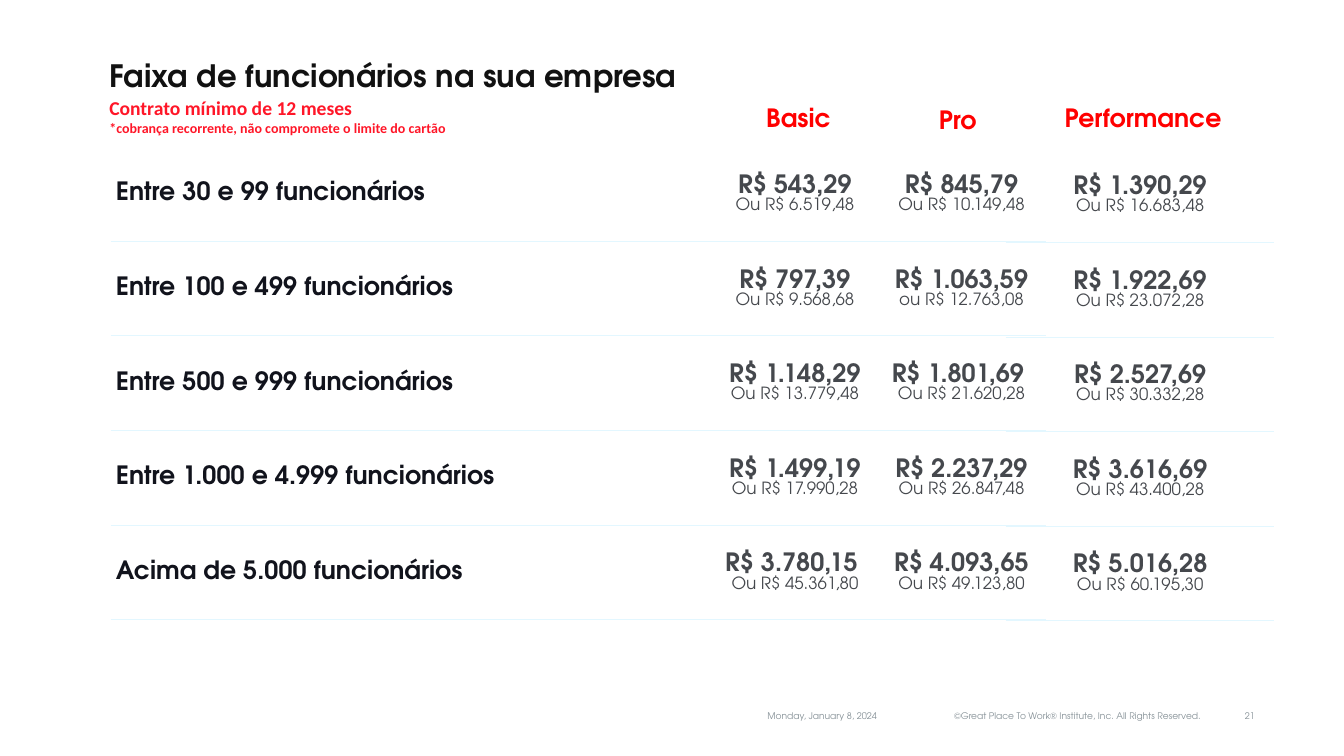
from dataclasses import dataclass

from lxml import etree
from pptx import Presentation
from pptx.dml.color import RGBColor
from pptx.enum.text import MSO_ANCHOR as Anchor, PP_ALIGN as Align
from pptx.oxml.ns import qn
from pptx.slide import Slide
from pptx.table import _Cell as Cell
from pptx.text.text import _Paragraph as Paragraph, _Run as Run
from pptx.util import Emu, Inches, Pt

UNIT = Inches(0.1)  # one column or row of the slide grid
GRID_COLUMNS, GRID_ROWS = 266.7, 150
PLAIN_TABLE = "{2D5ABB26-0587-4C30-8999-92F81FD0307C}"


@dataclass(frozen=True)
class Style:
    size: int
    color: str
    bold: bool = True
    font: str = "TeX Gyre Adventor"


@dataclass(frozen=True)
class Theme:
    title: Style = Style(44, "111111")
    contract: Style = Style(28, "FF1628", font="Calibri")
    note: Style = Style(20, "FF1628", font="Calibri")
    plan: Style = Style(36, "FF0000")
    label: Style = Style(36, "11131C")
    price: Style = Style(36, "45484D")
    yearly: Style = Style(24, "45484D", bold=False)
    footer: Style = Style(13, "879298", bold=False)
    rule: str = "E3F7FF"
    rule_width: float = 1.5


@dataclass(frozen=True)
class Area:
    """Place on the grid, in columns and rows."""
    left: float
    top: float
    width: float
    height: float

    def lengths(self) -> list[Emu]:
        return [grid(n) for n in (self.left, self.top, self.width, self.height)]


@dataclass(frozen=True)
class Price:
    monthly: str
    yearly: str


@dataclass(frozen=True)
class Band:
    """Prices of the three plans for one range of staff."""
    label: str
    basic: Price
    pro: Price
    performance: Price


@dataclass(frozen=True)
class Caption:
    text: str
    area: Area


THEME = Theme()
ROW_HEIGHT = 18.78
BANDS = [
    Band("Entre 30 e 99 funcionários", Price("R$ 543,29", "Ou R$ 6.519,48"),
         Price("R$ 845,79", "Ou R$ 10.149,48"), Price("R$ 1.390,29", "Ou R$ 16.683,48")),
    Band("Entre 100 e 499 funcionários", Price("R$ 797,39", "Ou R$ 9.568,68"),
         Price("R$ 1.063,59", "ou R$ 12.763,08"), Price("R$ 1.922,69", "Ou R$ 23.072,28")),
    Band("Entre 500 e 999 funcionários", Price("R$ 1.148,29", "Ou R$ 13.779,48"),
         Price("R$ 1.801,69 ", "Ou R$ 21.620,28"), Price("R$ 2.527,69", "Ou R$ 30.332,28")),
    Band("Entre 1.000 e 4.999 funcionários", Price("R$ 1.499,19", "Ou R$ 17.990,28"),
         Price("R$ 2.237,29", "Ou R$ 26.847,48"), Price("R$ 3.616,69", "Ou R$ 43.400,28")),
    Band("Acima de 5.000 funcionários", Price("R$ 3.780,15 ", "Ou R$ 45.361,80"),
         Price("R$ 4.093,65", "Ou R$ 49.123,80"), Price("R$ 5.016,28", "Ou R$ 60.195,30")),
]
PLANS = [
    Caption("Basic", Area(145.5, 19.9, 25.9, 7.1)),
    Caption("Pro", Area(177.1, 20.2, 25.9, 7.1)),
    Caption("Performance", Area(208.5, 19.9, 36.7, 7.1)),
]
FOOTERS = [
    Caption("Monday, January 8, 2024", Area(116.7, 140.8, 58.3, 2.5)),
    Caption("©Great Place To Work® Institute, Inc. All Rights Reserved.",
            Area(178.2, 140.8, 61, 2.5)),
    Caption("21", Area(242, 140.8, 8, 2.5)),
]


def grid(count: float) -> Emu:
    return Emu(round(count * UNIT))


def format_run(span: Run, style: Style) -> None:
    span.font.name = style.font
    span.font.size = Pt(style.size)
    span.font.bold = style.bold
    span.font.color.rgb = RGBColor.from_string(style.color)


def format_paragraph(para: Paragraph, align: Align, *styles: Style) -> None:
    """Align the paragraph and give each run its style in turn."""
    para.alignment = align
    for span, style in zip(para.runs, styles):
        format_run(span, style)


def add_text(page: Slide, caption: Caption, align: Align, *styles: Style,
             anchor: Anchor = Anchor.TOP) -> None:
    box = page.shapes.add_textbox(*caption.area.lengths())
    frame = box.text_frame
    frame.word_wrap = True
    frame.vertical_anchor = anchor
    frame.text = caption.text
    format_paragraph(frame.paragraphs[0], align, *styles)


def underline(cell: Cell) -> None:
    """Rule the bottom of the cell; borders must precede the fill."""
    line = etree.Element(qn("a:lnB"), w=str(Pt(THEME.rule_width)))
    fill = etree.SubElement(line, qn("a:solidFill"))
    etree.SubElement(fill, qn("a:srgbClr"), val=THEME.rule)
    cell._tc.get_or_add_tcPr().insert(0, line)


def fill_cell(cell: Cell, content: str | Price) -> None:
    cell.fill.background()
    cell.vertical_anchor = Anchor.MIDDLE
    frame = cell.text_frame
    if isinstance(content, Price):
        cell.margin_left = cell.margin_right = cell.margin_top = Inches(0.01)
        cell.margin_bottom = 0
        frame.text = f"{content.monthly}\n{content.yearly}"
        for para, style in zip(frame.paragraphs, (THEME.price, THEME.yearly)):
            format_paragraph(para, Align.CENTER, style)
    else:
        frame.text = content
        format_paragraph(frame.paragraphs[0], Align.LEFT, THEME.label)
    underline(cell)


def add_price_table(page: Slide, left: float, top: float, widths: list[float],
                    rows: list[list[str | Price]]) -> None:
    area = Area(left, top, sum(widths), ROW_HEIGHT * len(rows))
    table = page.shapes.add_table(len(rows), len(widths), *area.lengths()).table
    table.first_row = table.horz_banding = False
    table._tbl.tblPr.find(qn("a:tableStyleId")).text = PLAIN_TABLE
    for column, width in zip(table.columns, widths):
        column.width = grid(width)
    for row, contents in zip(table.rows, rows):
        row.height = grid(ROW_HEIGHT)
        for cell, content in zip(row.cells, contents):
            fill_cell(cell, content)


def main() -> None:
    deck = Presentation()
    deck.slide_width, deck.slide_height = grid(GRID_COLUMNS), grid(GRID_ROWS)
    page = deck.slides.add_slide(deck.slide_layouts[6])
    for footer in FOOTERS:
        add_text(page, footer, Align.RIGHT, THEME.footer, anchor=Anchor.MIDDLE)
    add_price_table(page, 22, 29.1, [119.4, 32.7, 33.4],
                    [[band.label, band.basic, band.pro] for band in BANDS])
    add_text(page, Caption("Faixa de funcionários na sua empresa",
                           Area(20.7, 10.8, 126, 8.4)), Align.LEFT, THEME.title)
    add_text(page, Caption("Contrato mínimo de 12 meses\v"
                           "*cobrança recorrente, não compromete o limite do cartão",
                           Area(20.7, 18.6, 109.5, 9.1)),
             Align.LEFT, THEME.contract, THEME.note)
    for plan in PLANS:
        add_text(page, plan, Align.CENTER, THEME.plan)
    add_price_table(page, 199.6, 29.3, [53.3], [[band.performance] for band in BANDS])
    deck.save("out.pptx")


if __name__ == "__main__":
    main()
